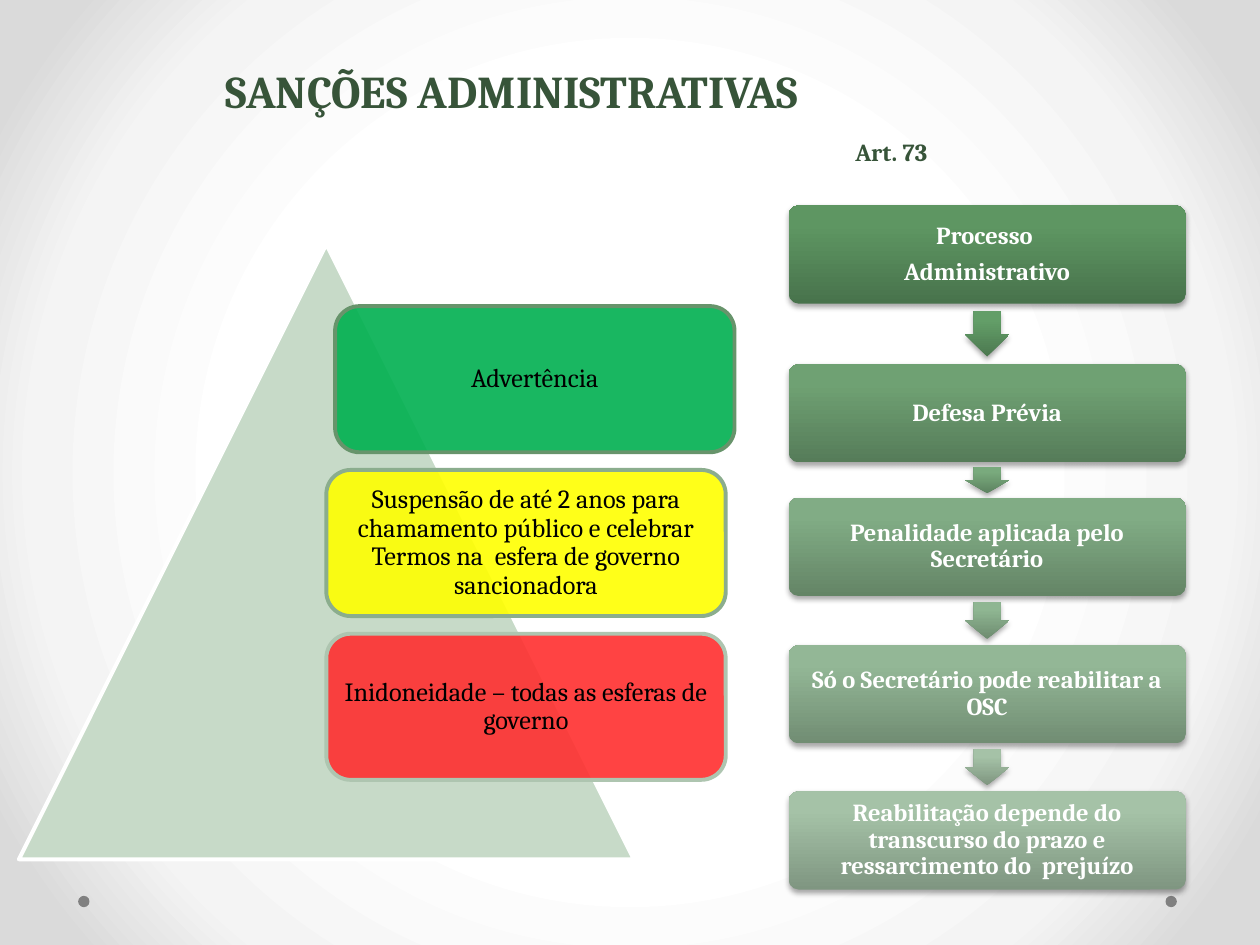
from lxml.etree import SubElement
from pptx import Presentation
from pptx.dml.color import RGBColor
from pptx.enum.shapes import MSO_SHAPE as Shape
from pptx.enum.text import MSO_ANCHOR as Anchor, PP_ALIGN as Align
from pptx.oxml import parse_xml
from pptx.oxml.ns import nsdecls, qn
from pptx.util import Inches, Pt


def color(value):
    return RGBColor.from_string(value)


def write(box, lines, size, ink, bold=False, align=Align.CENTER, anchor=Anchor.MIDDLE,
          margin=0.06, spacing=0.9, after=0):
    frame = box.text_frame
    frame.word_wrap = True
    frame.vertical_anchor = anchor
    frame.margin_left = frame.margin_right = Inches(margin)
    frame.margin_top = frame.margin_bottom = Inches(min(margin, 0.06))
    for index, line in enumerate(lines):
        para = frame.paragraphs[0] if index == 0 else frame.add_paragraph()
        para.alignment = align
        para.line_spacing = spacing
        para.space_after = Pt(after)
        span = para.add_run()
        span.text = line
        span.font.name = "Cambria"
        span.font.size = Pt(size)
        span.font.bold = bold
        span.font.color.rgb = color(ink)
    return frame


deck = Presentation()
deck.slide_width, deck.slide_height = Inches(10), Inches(7.5)
slide = deck.slides.add_slide(deck.slide_layouts[6])
shapes = slide.shapes

# Gradients are gathered here as (owner, stops, direction) and applied at the end
UPWARD = '<a:lin ang="16200000" scaled="0"/>'
RADIAL = '<a:path path="circle"><a:fillToRect l="50000" t="50000" r="50000" b="50000"/></a:path>'
slide.background.fill.gradient()
gradients = [(slide.element, [(50, "FFFFFF"), (76, "F4F4F4"), (92, "DADADA")], RADIAL)]

# Footer dots
for left in (9.25, 0.62):
    dot = shapes.add_shape(Shape.OVAL, Inches(left), Inches(7.11), Inches(0.09), Inches(0.09))
    dot.shadow.inherit = False
    dot.fill.solid()
    dot.fill.fore_color.rgb = color("808080")
    dot.line.fill.background()

# Pyramid
pyramid = shapes.add_shape(Shape.ISOSCELES_TRIANGLE, Inches(0.15), Inches(1.94),
                           Inches(4.88), Inches(4.88))
pyramid.shadow.inherit = False
pyramid.fill.solid()
pyramid.fill.fore_color.rgb = color("C7DAC8")
pyramid.line.color.rgb = color("FFFFFF")
pyramid.line.width = Pt(2.25)

# Sanctions, from mild to severe
sanctions = [
    (2.66, "00B050", "67946B", "Advertência"),
    (2.59, "FFFF00", "8BAD8D", "Suspensão de até 2 anos para chamamento público e celebrar "
                               "Termos na  esfera de governo sancionadora"),
    (2.59, "FF2F2F", "AEC5B0", "Inidoneidade – todas as esferas de governo"),
]
for row, (left, fill, border, label) in enumerate(sanctions):
    box = shapes.add_shape(Shape.ROUNDED_RECTANGLE, Inches(left), Inches(2.43 + 1.3 * row),
                           Inches(3.17), Inches(1.16))
    box.shadow.inherit = False
    box.fill.solid()
    box.fill.fore_color.rgb = color(fill)
    SubElement(box.element.spPr.find(".//" + qn("a:srgbClr")), qn("a:alpha"), val="90000")
    box.line.color.rgb = color(border)
    box.line.width = Pt(2.25)
    write(box, [label], 15, "000000")

# Process steps: top, box gradient, gradient of the arrow below, lines
STEP_LEFT, STEP_WIDTH, STEP_HEIGHT, ARROW_WIDTH = 6.26, 3.15, 0.78, 0.35
steps = [
    (1.63, ("48734C", "5E9662", "5D9862"), ("4C7950", "639E68", "62A067"),
     ["Processo ", "Administrativo"]),
    (2.89, ("567C59", "6FA173", "6FA373"), ("5D8360", "79AA7D", "79AB7D"),
     ["Defesa Prévia"]),
    (3.95, ("648566", "81AC85", "81AE84"), ("6E8C70", "8FB692", "8FB792"),
     ["Penalidade aplicada pelo Secretário"]),
    (5.12, ("718D73", "93B796", "93B996"), ("7F9680", "A5C2A7", "A5C4A7"),
     ["Só o Secretário pode reabilitar a OSC"]),
    (6.28, ("7F9681", "A5C2A7", "A5C4A8"), None,
     ["Reabilitação depende do transcurso do prazo e ressarcimento do  prejuízo"]),
]
for index, (top, box_colors, arrow_colors, lines) in enumerate(steps):
    box = shapes.add_shape(Shape.ROUNDED_RECTANGLE, Inches(STEP_LEFT), Inches(top),
                           Inches(STEP_WIDTH), Inches(STEP_HEIGHT))
    box.adjustments[0] = 0.1
    write(box, lines, 14, "FFFFFF", bold=True, after=5 if len(lines) > 1 else 0)
    parts = [(box, box_colors)]
    if arrow_colors:
        # The arrow fills three quarters of the gap to the next step
        bottom = top + STEP_HEIGHT
        gap = steps[index + 1][0] - bottom
        arrow = shapes.add_shape(Shape.DOWN_ARROW,
                                 Inches(STEP_LEFT + (STEP_WIDTH - ARROW_WIDTH) / 2),
                                 Inches(bottom + gap / 8), Inches(ARROW_WIDTH),
                                 Inches(gap * 0.75))
        arrow.adjustments[0], arrow.adjustments[1] = 0.6, 0.5
        parts.append((arrow, arrow_colors))
    for part, colors in parts:
        part.line.fill.background()
        part.fill.gradient()
        gradients.append((part.element, list(zip((0, 80, 100), colors)), UPWARD))
        part.shadow.inherit = False
        part.element.spPr.find(qn("a:effectLst")).append(parse_xml(
            f'<a:outerShdw {nsdecls("a")} blurRad="40000" dist="23000" dir="5400000" '
            'rotWithShape="0"><a:srgbClr val="000000"><a:alpha val="35000"/></a:srgbClr>'
            '</a:outerShdw>'))

# Title and article number
title = shapes.add_textbox(Inches(1.69), Inches(0.44), Inches(6.06), Inches(0.98))
frame = write(title, ["SANÇÕES ADMINISTRATIVAS", "Art. 73"], 26, "375439", bold=True,
              align=Align.LEFT, anchor=Anchor.TOP, margin=0.1, spacing=1.0)
article = frame.paragraphs[1]
article.runs[0].font.size = Pt(14)
article.space_before = Pt(11)
article._p.get_or_add_pPr().set("marL", str(Inches(5)))

# Apply the gradients
for owner, stops, direction in gradients:
    stop_xml = "".join(f'<a:gs pos="{position * 1000}"><a:srgbClr val="{value}"/></a:gs>'
                       for position, value in stops)
    old = owner.find(".//" + qn("a:gradFill"))
    old.getparent().replace(old, parse_xml(
        f'<a:gradFill {nsdecls("a")} rotWithShape="1"><a:gsLst>{stop_xml}</a:gsLst>'
        f'{direction}</a:gradFill>'))

deck.save("out.pptx")
